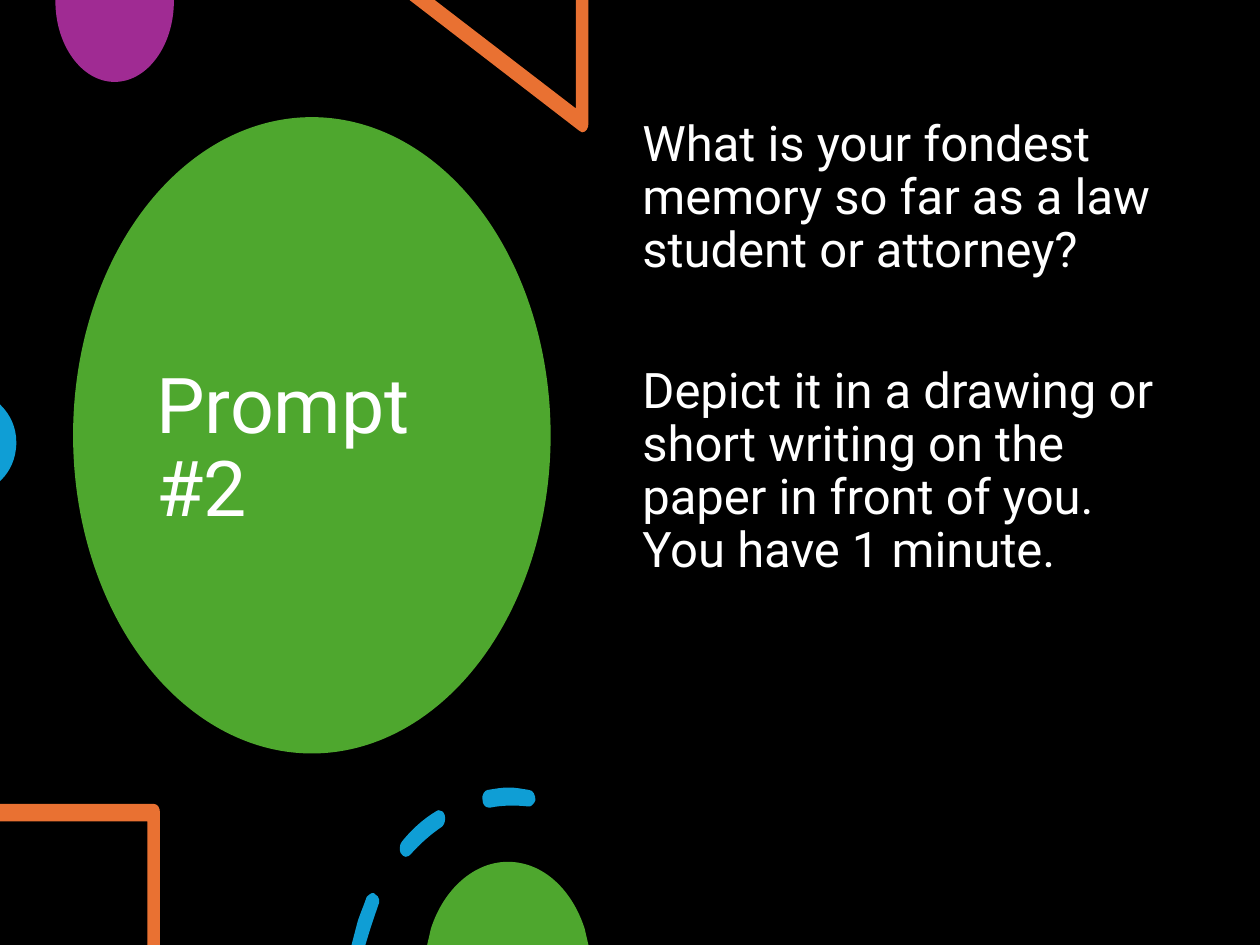
from lxml import etree
from pptx import Presentation
from pptx.dml.color import RGBColor
from pptx.enum.shapes import MSO_SHAPE
from pptx.enum.text import MSO_ANCHOR, MSO_AUTO_SIZE, PP_ALIGN
from pptx.oxml.ns import qn
from pptx.util import Inches, Pt

BLACK = RGBColor(0x00, 0x00, 0x00)
WHITE = RGBColor(0xFF, 0xFF, 0xFF)
GREEN = RGBColor(0x4E, 0xA7, 0x2E)
PURPLE = RGBColor(0xA0, 0x2B, 0x93)
ORANGE = RGBColor(0xE9, 0x71, 0x32)
BLUE = RGBColor(0x0F, 0x9E, 0xD5)
FONT = "Roboto"

# Outlines in inches from the box corner: two numbers are a straight step,
# six are a cubic curve (two controls and an end point).
PURPLE_DOT = [[(0.94, 0), (0, 0), (0, 0.01), (0, 0.36, 0.21, 0.65, 0.47, 0.65),
               (0.73, 0.65, 0.94, 0.36, 0.94, 0.01)]]
TRIANGLE = [[(1.42, 0), (1.32, 0), (1.32, 0.86), (0.2, 0), (0, 0), (1.35, 1.04),
             (1.36, 1.05, 1.36, 1.05, 1.37, 1.05),
             (1.4, 1.05, 1.42, 1.02, 1.42, 0.98)]]
BLUE_DOT = [[(0, 0), (0, 0.61), (0.01, 0.6), (0.08, 0.53, 0.13, 0.43, 0.13, 0.3),
             (0.13, 0.18, 0.08, 0.08, 0.01, 0.01)]]
SQUARE_CORNER = [[(1.22, 0), (0, 0), (0, 0.14), (1.17, 0.14), (1.17, 1.12),
                  (1.27, 1.12), (1.27, 0.07), (1.27, 0.03, 1.25, 0, 1.22, 0)]]
DASHED_ARC = [
    [(0.18, 0.84), (0.16, 0.83, 0.14, 0.85, 0.12, 0.87),
     (0.1, 0.93, 0.07, 1, 0.05, 1.06), (0, 1.25), (0.11, 1.25), (0.15, 1.12),
     (0.17, 1.06, 0.19, 1, 0.21, 0.94), (0.23, 0.91, 0.22, 0.86, 0.19, 0.85),
     (0.19, 0.84, 0.18, 0.84, 0.18, 0.84)],
    [(0.69, 0.18), (0.68, 0.18, 0.68, 0.18, 0.67, 0.19),
     (0.57, 0.25, 0.48, 0.33, 0.4, 0.43), (0.38, 0.45, 0.38, 0.5, 0.39, 0.52),
     (0.4, 0.54, 0.42, 0.55, 0.43, 0.55), (0.43, 0.55),
     (0.45, 0.55, 0.46, 0.54, 0.47, 0.53), (0.54, 0.45, 0.63, 0.37, 0.72, 0.31),
     (0.74, 0.29, 0.75, 0.25, 0.74, 0.22), (0.73, 0.19, 0.71, 0.18, 0.69, 0.18)],
    [(1.25, 0), (1.19, 0, 1.14, 0.01, 1.08, 0.02),
     (1.06, 0.02, 1.03, 0.06, 1.04, 0.1), (1.04, 0.13, 1.06, 0.16, 1.09, 0.16),
     (1.09, 0.16, 1.09, 0.16, 1.1, 0.16), (1.2, 0.14, 1.3, 0.14, 1.4, 0.15),
     (1.42, 0.16, 1.45, 0.13, 1.46, 0.1), (1.46, 0.06, 1.44, 0.02, 1.41, 0.02),
     (1.41, 0.02, 1.41, 0.02, 1.41, 0.02), (1.35, 0.01, 1.3, 0, 1.25, 0)],
]
GREEN_DOT = [[(0.64, 0), (0.37, 0, 0.13, 0.22, 0.03, 0.53), (0, 0.66), (1.28, 0.66),
              (1.25, 0.53), (1.15, 0.22, 0.92, 0, 0.64, 0)]]

# left, top, outline, colour
TOP_ORNAMENTS = [
    (0.44, 0, PURPLE_DOT, PURPLE),
    (3.25, 0, TRIANGLE, ORANGE),
    (0, 3.21, BLUE_DOT, BLUE),
]
BOTTOM_ORNAMENTS = [
    (0, 6.38, SQUARE_CORNER, ORANGE),
    (2.79, 6.25, DASHED_ARC, BLUE),
    (3.39, 6.84, GREEN_DOT, GREEN),
]


def paint(shape, color):
    shape.shadow.inherit = False
    shape.fill.solid()
    shape.fill.fore_color.rgb = color
    shape.line.fill.background()


def bend_segments(shape, outline):
    """Turn the straight segments of curved steps into cubic curves."""
    segments = list(shape.element.iter(qn("a:moveTo"), qn("a:lnTo")))
    steps = [step for contour in outline for step in contour]
    for segment, step in zip(segments, steps):
        if len(step) == 6:
            segment.tag = qn("a:cubicBezTo")
            for i in (0, 1):
                x, y = step[2 * i:2 * i + 2]
                control = etree.Element(qn("a:pt"), x=str(Inches(x)), y=str(Inches(y)))
                segment.insert(i, control)


def add_ornament(slide, left, top, outline, color):
    contours = [[(Inches(left + step[-2]), Inches(top + step[-1])) for step in contour]
                for contour in outline]
    builder = slide.shapes.build_freeform(*contours[0][0])
    builder.add_line_segments(contours[0][1:], close=True)
    for contour in contours[1:]:
        builder.move_to(*contour[0])
        builder.add_line_segments(contour[1:], close=True)
    ornament = builder.convert_to_shape()
    bend_segments(ornament, outline)
    paint(ornament, color)


def format_paragraph(paragraph, size, space_before):
    paragraph.alignment = PP_ALIGN.LEFT
    paragraph.line_spacing = 0.9
    paragraph.space_before = Pt(space_before)
    for run in paragraph.runs:
        run.font.name = FONT
        run.font.size = Pt(size)
        run.font.color.rgb = WHITE


def add_title_oval(slide, left, top, width, height):
    oval = slide.shapes.add_shape(MSO_SHAPE.OVAL, left, top, width, height)
    paint(oval, GREEN)

    title = slide.shapes.title
    oval.element.addnext(title.element)  # bring the title in front of the oval
    title.left, title.top = left + Inches(0.56), top + Inches(0.42)
    title.width, title.height = width - Inches(1.13), height - Inches(0.6)
    frame = title.text_frame
    frame.text = "Prompt #2"
    frame.word_wrap = True
    frame.auto_size = MSO_AUTO_SIZE.NONE
    frame.vertical_anchor = MSO_ANCHOR.MIDDLE
    format_paragraph(frame.paragraphs[0], 44, 0)


def add_prompt(slide, left, top, width, height):
    frame = slide.shapes.add_textbox(left, top, width, height).text_frame
    frame.word_wrap = True
    frame.text = (
        "What is your fondest memory so far as a law student or attorney?\n"
        "Depict it in a drawing or short writing on the paper in front of you. "
        "You have 1 minute."
    )
    question, task = frame.paragraphs
    format_paragraph(question, 28, 10)
    format_paragraph(task, 28, 50)


def main():
    prs = Presentation()
    prs.slide_width, prs.slide_height = Inches(10), Inches(7.5)
    slide = prs.slides.add_slide(prs.slide_layouts.get_by_name("Title Only"))
    slide.background.fill.solid()
    slide.background.fill.fore_color.rgb = BLACK

    add_title_oval(slide, Inches(0.58), Inches(0.93), Inches(3.79), Inches(5.05))
    for ornament in TOP_ORNAMENTS:
        add_ornament(slide, *ornament)
    add_prompt(slide, Inches(5), Inches(0.9), Inches(4.31), Inches(5.35))
    for ornament in BOTTOM_ORNAMENTS:
        add_ornament(slide, *ornament)
    prs.save("out.pptx")


if __name__ == "__main__":
    main()
